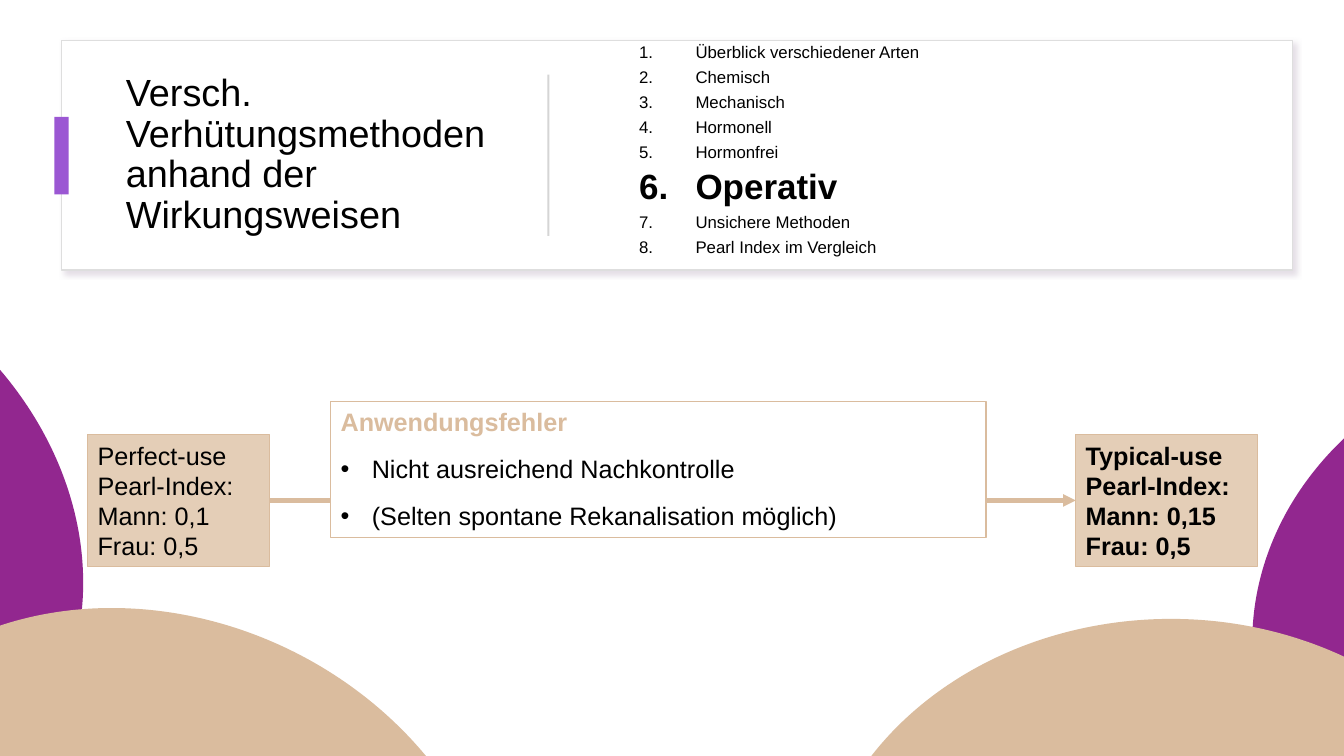
from lxml import etree
from pptx import Presentation
from pptx.dml.color import RGBColor
from pptx.enum import shapes, text
from pptx.oxml import parse_xml
from pptx.oxml.ns import nsdecls, qn
from pptx.util import Inches, Pt

FONT = "Arial"
BLACK, WHITE = "000000", "FFFFFF"
PURPLE, ACCENT = "92278F", "9B57D3"
SAND, LIGHT_SAND = "DABC9E", "E4CEB7"
RECTANGLE = shapes.MSO_SHAPE.RECTANGLE
OVAL = shapes.MSO_SHAPE.OVAL

TITLE = "Versch. Verhütungsmethoden anhand der Wirkungsweisen"
CHAPTERS = ["Überblick verschiedener Arten", "Chemisch", "Mechanisch", "Hormonell",
            "Hormonfrei", "Operativ", "Unsichere Methoden", "Pearl Index im Vergleich"]
CURRENT_CHAPTER = "Operativ"


def color(value):
    return RGBColor.from_string(value)


def add_block(page, kind, left, top, width, height, fill, line=None, line_width=0.75):
    block = page.shapes.add_shape(kind, Inches(left), Inches(top), Inches(width), Inches(height))
    block.shadow.inherit = False
    block.fill.solid()
    block.fill.fore_color.rgb = color(fill)
    if line:
        block.line.color.rgb = color(line)
        block.line.width = Pt(line_width)
    else:
        block.line.fill.background()
    return block


def add_text_box(page, left, top, width, height):
    box = page.shapes.add_textbox(Inches(left), Inches(top), Inches(width), Inches(height))
    box.text_frame.word_wrap = True
    box.text_frame.vertical_anchor = text.MSO_ANCHOR.MIDDLE
    return box.text_frame


def write_paragraphs(frame, lines):
    frame.text = "\n".join(lines)
    return frame.paragraphs


def style(para, size, bold=False, fill=BLACK):
    para.alignment = text.PP_ALIGN.LEFT
    para.font.name = FONT
    para.font.size = Pt(size)
    para.font.bold = bold
    para.font.color.rgb = color(fill)


def add_marker(para, margin, hanging, tag, **attributes):
    """Give the paragraph a hanging indent and a bullet or number."""
    properties = para._p.get_or_add_pPr()
    properties.set("marL", str(Inches(margin)))
    properties.set("indent", str(-Inches(hanging)))
    font = etree.SubElement(properties, qn("a:buFont"))
    font.set("typeface", FONT)
    marker = etree.SubElement(properties, qn(tag))
    for name, value in attributes.items():
        marker.set(name, value)


def add_soft_shadow(block):
    block._element.spPr.find(qn("a:effectLst")).append(parse_xml(
        f'<a:outerShdw {nsdecls("a")} blurRad="{Pt(4)}" dist="{Pt(3)}" dir="2700000">'
        '<a:srgbClr val="CABECD"><a:alpha val="50000"/></a:srgbClr></a:outerShdw>'))


def add_header(page, left, top, width, height):
    card = add_block(page, RECTANGLE, left, top, width, height, WHITE, "DEDEDE", 1)
    add_soft_shadow(card)
    heading = add_text_box(page, left + 0.54, top + 0.24, 4, 1.8)
    for para in write_paragraphs(heading, [TITLE]):
        para.line_spacing = 0.9
        style(para, 27)
    add_block(page, RECTANGLE, left - 0.07, top + 0.76, 0.14, 0.77, ACCENT)
    add_block(page, RECTANGLE, left + 4.82, top + 0.34, 0.02, 1.6, "D5D5D5")
    add_chapters(page, left + 5.13, top, 6.68, 2.19)


def add_chapters(page, left, top, width, height):
    frame = add_text_box(page, left, top, width, height)
    for index, para in enumerate(write_paragraphs(frame, CHAPTERS)):
        current = CHAPTERS[index] == CURRENT_CHAPTER
        para.line_spacing = 0.9
        if index:
            para.space_before = Pt(5)
        add_marker(para, 1.06, 0.56, "a:buAutoNum", type="arabicPeriod")
        style(para, 25 if current else 12, current)


def add_hills(page):
    width, height = 7.13, 6.07
    for left, top, turn, fill in [(12.42, 3.34, 0, PURPLE), (8.05, 6.14, 0, SAND),
                                  (-6.21, 2.35, 25.9, PURPLE), (-2.02, 6.14, 25.9, SAND)]:
        add_block(page, OVAL, left, top, width, height, fill).rotation = turn


def add_index_box(page, left, top, width, height, lines, bold):
    block = add_block(page, RECTANGLE, left, top, width, height, LIGHT_SAND, SAND)
    block.text_frame.word_wrap = True
    for para in write_paragraphs(block.text_frame, lines):
        style(para, 18, bold)


def add_arrow(page, left, right, middle):
    arrow = page.shapes.add_connector(shapes.MSO_CONNECTOR.STRAIGHT, Inches(left),
                                      Inches(middle), Inches(right), Inches(middle))
    arrow.line.color.rgb = color(SAND)
    arrow.line.width = Pt(3)
    etree.SubElement(arrow.line._get_or_add_ln(), qn("a:tailEnd")).set("type", "triangle")
    etree.SubElement(arrow._element.spPr, qn("a:effectLst"))


def add_errors(page, left, top, width, height):
    block = add_block(page, RECTANGLE, left, top, width, height, WHITE, SAND)
    block.text_frame.word_wrap = True
    block.text_frame.vertical_anchor = text.MSO_ANCHOR.TOP
    heading, *points = write_paragraphs(block.text_frame, [
        "Anwendungsfehler", "Nicht ausreichend Nachkontrolle",
        "(Selten spontane Rekanalisation möglich)"])
    heading.space_after = Pt(12)
    style(heading, 18, True, SAND)
    for para in points:
        para.space_after = Pt(12)
        add_marker(para, 0.31, 0.31, "a:buChar", char="•")
        style(para, 18)


def add_comparison(page, left, top, width, height):
    """Place the two Pearl index boxes at the ends of an arrow."""
    box_width = 1.8
    right = left + width - box_width
    add_arrow(page, left + box_width, right, top + height / 2)
    add_index_box(page, left, top, box_width, height,
                  ["Perfect-use Pearl-Index:", "Mann: 0,1", "Frau: 0,5"], False)
    add_index_box(page, right, top, box_width, height,
                  ["Typical-use Pearl-Index:", "Mann: 0,15", "Frau: 0,5"], True)


def main():
    deck = Presentation()
    deck.slide_width, deck.slide_height = Inches(13.33), Inches(7.5)
    page = deck.slides.add_slide(deck.slide_layouts[6])
    add_header(page, 0.61, 0.4, 12.21, 2.28)
    add_comparison(page, 0.87, 4.31, 11.6, 1.31)
    add_hills(page)
    add_errors(page, 3.28, 3.98, 6.5, 1.35)
    deck.save("out.pptx")


if __name__ == "__main__":
    main()
